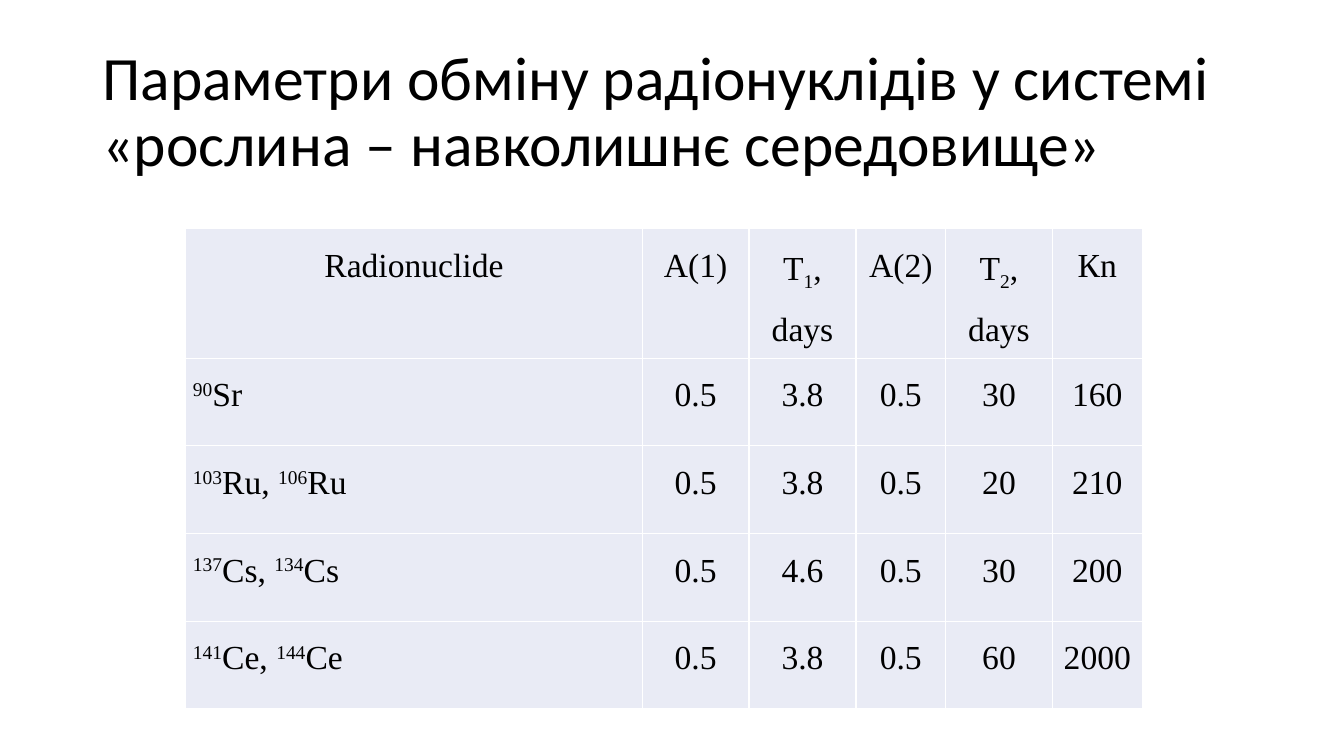
import pptx
import pptx.util
import pptx.dml.color
import pptx.enum.text
import pptx.oxml
import pptx.oxml.ns

Pt = pptx.util.Pt
ALIGN = pptx.enum.text.PP_ALIGN
COLORS = {"text": "000000", "cell": "E9EBF5", "border": "FFFFFF"}
BASELINES = {"^": "30000", "_": "-25000"}
COLUMN_WIDTHS = [326.16, 76.32, 76.32, 64.08, 76.32, 64.08]
ROW_HEIGHTS = [73.44] + [62.64] * 4
ROWS = [
    ["Radionuclide", "A(1)", "T|_1|, days", "A(2)", "T|_2|, days", "Кn"],
    ["^90|Sr", "0.5", "3.8", "0.5", "30", "160"],
    ["^103|Ru, |^106|Ru", "0.5", "3.8", "0.5", "20", "210"],
    ["^137|Cs, |^134|Cs", "0.5", "4.6", "0.5", "30", "200"],
    ["^141|Ce, |^144|Ce", "0.5", "3.8", "0.5", "60", "2000"],
]


def style_paragraph(paragraph, font_name, size, spacing, alignment):
    paragraph.font.name = font_name
    paragraph.font.size = Pt(size)
    paragraph.font.color.rgb = pptx.dml.color.RGBColor.from_string(COLORS["text"])
    paragraph.line_spacing = spacing
    paragraph.alignment = alignment


def add_borders(cell):
    properties = cell._tc.get_or_add_tcPr()
    for index, side in enumerate(["lnL", "lnR", "lnT", "lnB"]):
        border = pptx.oxml.parse_xml(
            f'<a:{side} {pptx.oxml.ns.nsdecls("a")} w="12700"><a:solidFill>'
            f'<a:srgbClr val="{COLORS["border"]}"/></a:solidFill></a:{side}>'
        )
        properties.insert(index, border)


presentation = pptx.Presentation()
presentation.slide_width = Pt(960)
presentation.slide_height = Pt(540)
slide = presentation.slides.add_slide(presentation.slide_layouts[6])

title = slide.shapes.add_textbox(Pt(66), Pt(28.75), Pt(828), Pt(104.4))
title.text_frame.word_wrap = True
title.text_frame.vertical_anchor = pptx.enum.text.MSO_ANCHOR.MIDDLE
title_paragraph = title.text_frame.paragraphs[0]
title_paragraph.text = "Параметри обміну радіонуклідів у системі «рослина – навколишнє середовище»"
style_paragraph(title_paragraph, "Calibri", 44, 0.9, ALIGN.LEFT)

table = slide.shapes.add_table(
    len(ROWS), len(COLUMN_WIDTHS), Pt(132.6), Pt(163.5),
    Pt(sum(COLUMN_WIDTHS)), Pt(sum(ROW_HEIGHTS)),
).table
table.first_row = False
table.horz_banding = False
for column, width in zip(table.columns, COLUMN_WIDTHS):
    column.width = Pt(width)

for row_index, (row_height, values) in enumerate(zip(ROW_HEIGHTS, ROWS)):
    table.rows[row_index].height = Pt(row_height)
    for column_index, value in enumerate(values):
        cell = table.cell(row_index, column_index)
        cell.margin_left = cell.margin_right = Pt(5.2)
        cell.margin_top = cell.margin_bottom = 0
        cell.fill.solid()
        cell.fill.fore_color.rgb = pptx.dml.color.RGBColor.from_string(COLORS["cell"])
        add_borders(cell)
        paragraph = cell.text_frame.paragraphs[0]
        is_nuclide = row_index > 0 and column_index == 0
        alignment = ALIGN.JUSTIFY if is_nuclide else ALIGN.CENTER
        style_paragraph(paragraph, "Times New Roman", 24, 1.5, alignment)
        for piece in value.split("|"):
            run = paragraph.add_run()
            run.text = piece.lstrip("^_")
            if piece[0] in BASELINES:
                run._r.get_or_add_rPr().set("baseline", BASELINES[piece[0]])

presentation.save("out.pptx")
